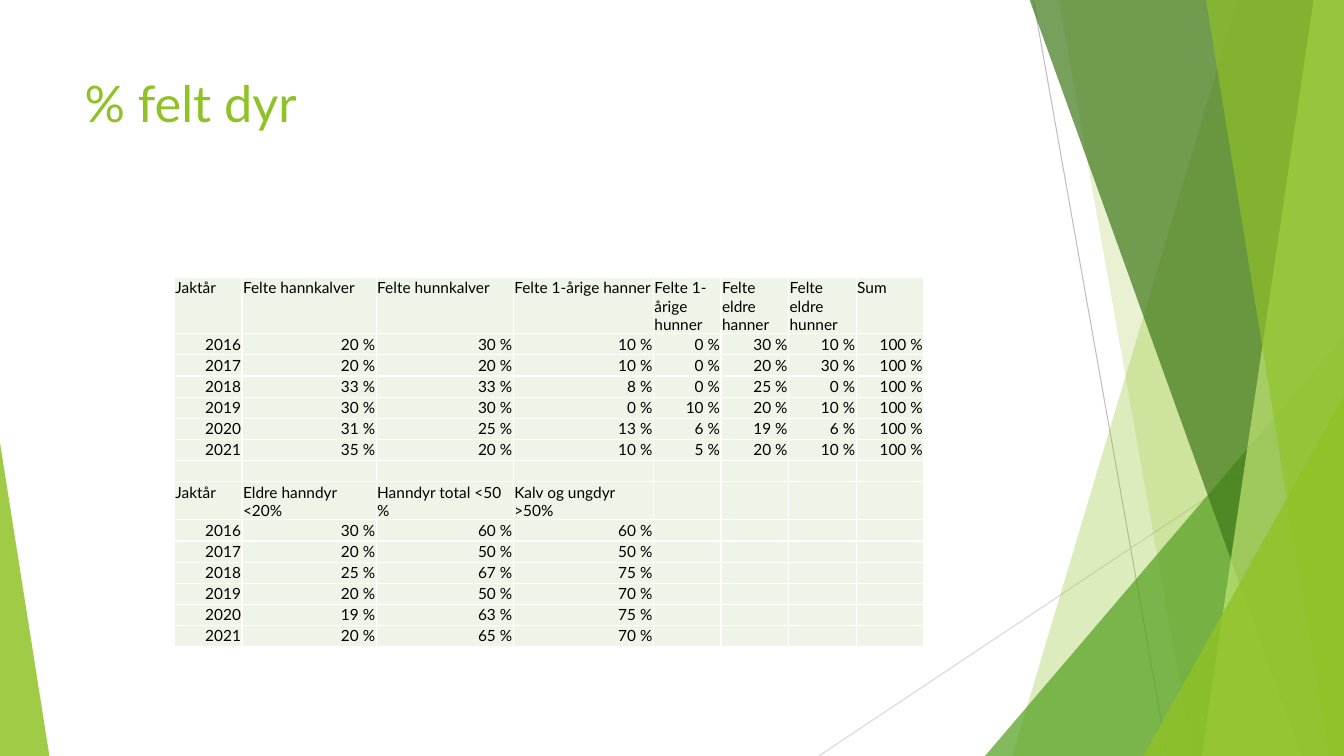
from dataclasses import dataclass

from lxml import etree
from pptx import Presentation
from pptx.dml.color import RGBColor
from pptx.enum.shapes import MSO_CONNECTOR, MSO_SHAPE
from pptx.enum.text import MSO_ANCHOR, PP_ALIGN
from pptx.oxml.ns import qn
from pptx.util import Inches, Pt

STRAIGHT = MSO_CONNECTOR.STRAIGHT
TRIANGLE = MSO_SHAPE.ISOSCELES_TRIANGLE
TOP, BOTTOM = MSO_ANCHOR.TOP, MSO_ANCHOR.BOTTOM
LEFT, RIGHT = PP_ALIGN.LEFT, PP_ALIGN.RIGHT
WIDTH, HEIGHT = Inches(13.33), Inches(7.5)


@dataclass(frozen=True)
class Theme:
    font: str = "Lato"
    title_size: int = 36
    cell_size: int = 11
    lime: str = "90C226"
    green: str = "54A021"
    dark: str = "3F7819"
    pale: str = "C0E474"
    rule: str = "BFBFBF"
    light_rule: str = "D9D9D9"
    cell: str = "EEF4E8"
    border: str = "FFFFFF"
    text: str = "000000"


T = Theme()

# Table content: each block is a header and one row of percentages per year
FELLED_HEADER = ["Jaktår", "Felte hannkalver", "Felte hunnkalver",
                 "Felte 1-årige hanner", "Felte 1-årige hunner",
                 "Felte eldre hanner", "Felte eldre hunner", "Sum"]
FELLED = {
    2016: [20, 30, 10, 0, 30, 10, 100],
    2017: [20, 20, 10, 0, 20, 30, 100],
    2018: [33, 33, 8, 0, 25, 0, 100],
    2019: [30, 30, 0, 10, 20, 10, 100],
    2020: [31, 25, 13, 6, 19, 6, 100],
    2021: [35, 20, 10, 5, 20, 10, 100],
}
GOALS_HEADER = ["Jaktår", "Eldre hanndyr <20%", "Hanndyr total <50 %",
                "Kalv og ungdyr >50%"]
GOALS = {
    2016: [30, 60, 60],
    2017: [20, 50, 50],
    2018: [25, 67, 75],
    2019: [20, 50, 70],
    2020: [19, 63, 75],
    2021: [20, 65, 70],
}
COLUMN_WIDTHS = [5.03, 9.98, 10.2, 10.43] + [5.03] * 4
ROW_HEIGHT = 2.8


# Lengths are percentages of the slide's width and height
def x(share):
    return round(WIDTH * share / 100)


def y(share):
    return round(HEIGHT * share / 100)


def write(tf, text, *, size, color, align=LEFT, anchor=TOP):
    tf.word_wrap = True
    tf.vertical_anchor = anchor
    p = tf.paragraphs[0]
    p.alignment = align
    r = p.add_run()
    r.text = text
    r.font.name = T.font
    r.font.size = Pt(size)
    r.font.color.rgb = RGBColor.from_string(color)


def paint(sp, color, opacity):
    sp.shadow.inherit = False
    sp.fill.solid()
    sp.fill.fore_color.rgb = RGBColor.from_string(color)
    sp.line.fill.background()
    clr = sp._element.spPr.find(".//" + qn("a:srgbClr"))
    etree.SubElement(clr, qn("a:alpha"), val=str(opacity * 1000))


def add_rule(s, start, end, color):
    line = s.add_connector(STRAIGHT, x(start[0]), y(start[1]), x(end[0]), y(end[1]))
    line.line.color.rgb = RGBColor.from_string(color)
    line.line.width = Pt(0.75)
    etree.SubElement(line._element.spPr, qn("a:effectLst"))


def add_band(s, top_left, bottom_left, color, opacity):
    """A full-height band from a slanted left edge to the slide's right edge."""
    top = y(-0.13)
    outline = s.build_freeform(x(top_left), top)
    outline.add_line_segments(
        [(x(100), top), (x(100), y(100)), (x(bottom_left), y(100))], close=True)
    paint(outline.convert_to_shape(), color, opacity)


def add_corner(s, left, right, top, peak, color, opacity):
    """A right-angled triangle that stands on the slide's bottom edge."""
    sp = s.add_shape(TRIANGLE, x(left), y(top), x(right - left), y(100 - top))
    sp.adjustments[0] = peak
    paint(sp, color, opacity)


def add_backdrop(s):
    add_rule(s, (76.89, 0), (86.87, 100), T.rule)
    add_rule(s, (100, 53.73), (60.92, 100), T.light_rule)
    add_band(s, 92.12, 75.32, T.lime, 30)
    add_band(s, 78.77, 88.75, T.lime, 20)
    add_corner(s, 73.29, 100, 44.4, 1, T.green, 72)
    add_band(s, 76.59, 96.85, T.dark, 70)
    add_band(s, 97.75, 89.42, T.pale, 70)
    add_band(s, 89.72, 98.87, T.lime, 65)
    add_corner(s, 85.07, 100, 52.4, 1, T.lime, 80)
    add_corner(s, 0, 3.68, 58.53, 0, T.lime, 85)


def add_title(s, text):
    box = s.add_textbox(x(5.55), y(8.93), x(70.52), y(19.2))
    write(box.text_frame, text, size=T.title_size, color=T.lime)


def format_cell(cell):
    cell.margin_left = cell.margin_right = cell.margin_top = Inches(0.01)
    cell.margin_bottom = 0
    # Borders go before the fill in the cell's properties
    for side in ("a:lnL", "a:lnR", "a:lnT", "a:lnB"):
        ln = etree.SubElement(cell._tc.get_or_add_tcPr(), qn(side), w=str(Pt(1)))
        fill = etree.SubElement(ln, qn("a:solidFill"))
        etree.SubElement(fill, qn("a:srgbClr"), val=T.border)
    cell.fill.solid()
    cell.fill.fore_color.rgb = RGBColor.from_string(T.cell)


def block_rows(header, data):
    return [header] + [[str(year)] + [f"{v} %" for v in values]
                       for year, values in data.items()]


def add_data_table(s, rows, headers):
    frame = s.add_table(len(rows), len(COLUMN_WIDTHS), x(12.98), y(36.67),
                        x(sum(COLUMN_WIDTHS)), y(ROW_HEIGHT * len(rows)))
    table = frame.table
    table.first_row = table.horz_banding = False
    for column, width in zip(table.columns, COLUMN_WIDTHS):
        column.width = x(width)
    for row, texts in zip(table.rows, rows):
        row.height = y(ROW_HEIGHT)
        align = LEFT if texts in headers else RIGHT
        for i, cell in enumerate(row.cells):
            format_cell(cell)
            if i < len(texts):
                write(cell.text_frame, texts[i], size=T.cell_size,
                      color=T.text, align=align, anchor=BOTTOM)
            else:
                # Empty cells keep the small type, so the row stays low
                etree.SubElement(cell.text_frame.paragraphs[0]._p,
                                 qn("a:endParaRPr"), sz=str(T.cell_size * 100))
    frame.height = y(48.67)


def main():
    prs = Presentation()
    prs.slide_width, prs.slide_height = WIDTH, HEIGHT
    slide = prs.slides.add_slide(prs.slide_layouts[6])
    s = slide.shapes
    add_backdrop(s.add_group_shape().shapes)
    add_title(s, "% felt dyr")
    rows = block_rows(FELLED_HEADER, FELLED) + [[]] + block_rows(GOALS_HEADER, GOALS)
    add_data_table(s, rows, (FELLED_HEADER, GOALS_HEADER))
    prs.save("out.pptx")


if __name__ == "__main__":
    main()
